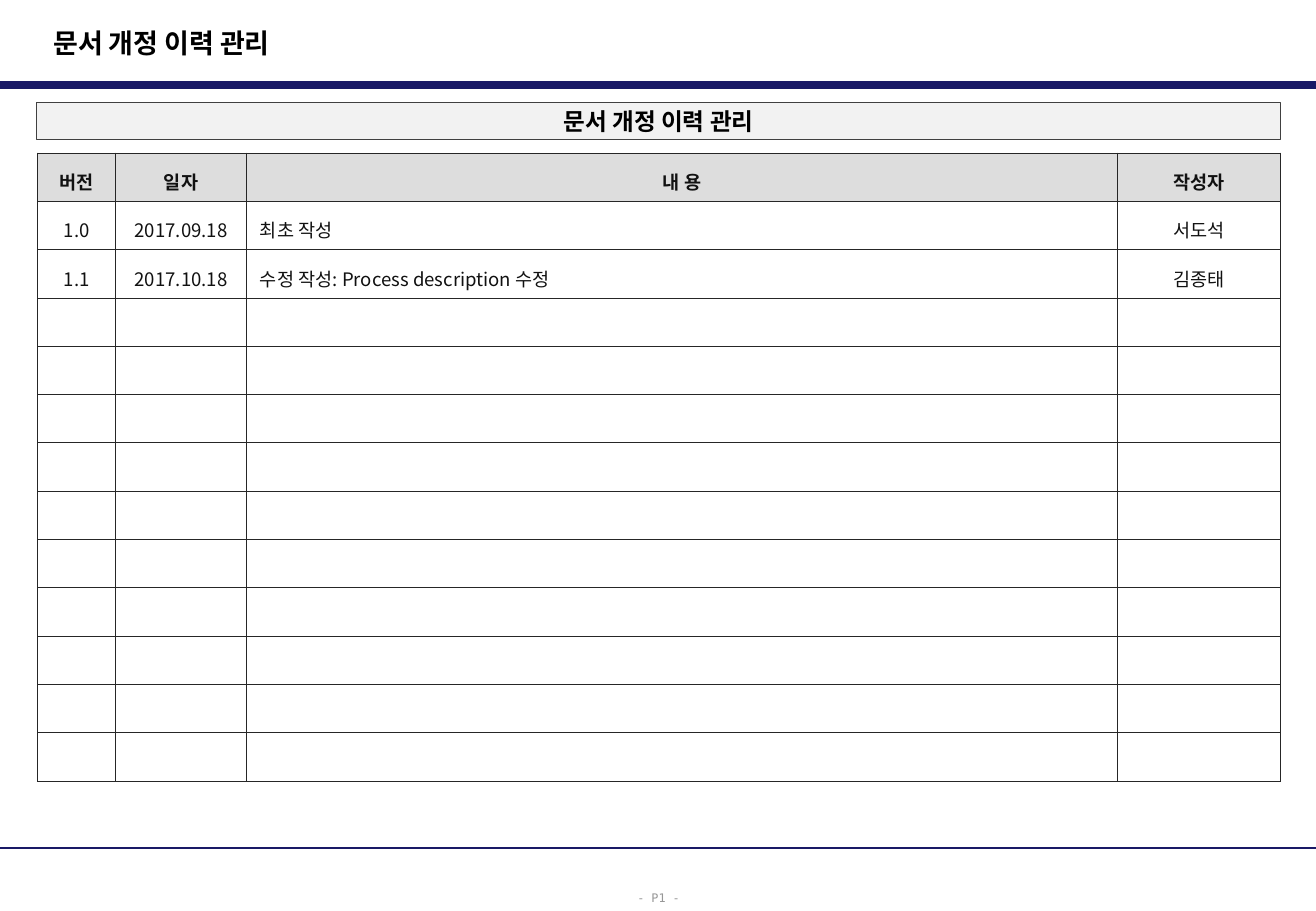
from dataclasses import dataclass

from lxml import etree
from pptx import Presentation
from pptx.dml.color import RGBColor
from pptx.enum.shapes import MSO_CONNECTOR, MSO_SHAPE
from pptx.enum.text import MSO_ANCHOR, PP_ALIGN
from pptx.oxml.ns import qn
from pptx.util import Emu, Inches, Pt

LEFT, CENTER = PP_ALIGN.LEFT, PP_ALIGN.CENTER
TOP, MIDDLE = MSO_ANCHOR.TOP, MSO_ANCHOR.MIDDLE
RECT, STRAIGHT = MSO_SHAPE.RECTANGLE, MSO_CONNECTOR.STRAIGHT

NAVY = RGBColor(0x19, 0x19, 0x66)
BLACK = RGBColor(0, 0, 0)
INK = RGBColor(0x11, 0x11, 0x11)
EDGE = RGBColor(0x26, 0x26, 0x26)
FRAME = RGBColor(0x40, 0x40, 0x40)
MUTED = RGBColor(0x96, 0x96, 0x96)
PALE = RGBColor(0xF2, 0xF2, 0xF2)
HEAD = RGBColor(0xDD, 0xDD, 0xDD)

WIDTH, HEIGHT = Inches(10.83), Inches(7.5)
SANS, MONO = "Noto Sans CJK KR", "DejaVu Sans Mono"
TITLE = "문서 개정 이력 관리"

# Column widths in percent of the slide width
COLS = (5.93, 9.95, 66.2, 12.39)
ROWS = 13
DATA = (
    ("버전", "일자", "내 용", "작성자"),
    ("1.0", "2017.09.18", "최초 작성", "서도석"),
    ("1.1", "2017.10.18", "수정 작성: Process description 수정", "김종태"),
)


@dataclass(frozen=True)
class Style:
    size: float
    color: RGBColor
    bold: bool = False
    font: str = SANS
    align: PP_ALIGN = CENTER
    space: float = 1.0


@dataclass(frozen=True)
class Box:
    """Place and size in percent of the slide."""
    x: float
    y: float
    w: float
    h: float

    def place(self) -> tuple:
        return across(self.x), down(self.y), across(self.w), down(self.h)


@dataclass(frozen=True)
class Label:
    box: Box
    text: str
    style: Style
    anchor: MSO_ANCHOR
    wrap: bool


@dataclass(frozen=True)
class Rule:
    y: float
    weight: float


RULES = (Rule(9.33, 4.5), Rule(93.07, 1.5))
LABELS = (
    Label(Box(47.46, 96.67, 5.17, 3.33), "- P1 -",
          Style(7, MUTED, font=MONO, space=1.3), TOP, False),
    Label(Box(3.14, 2.13, 65.65, 5.07), TITLE,
          Style(16, BLACK, True, align=LEFT), MIDDLE, True),
)
BANNER = Label(Box(2.77, 11.2, 94.55, 4.13), TITLE,
               Style(14, BLACK, True), MIDDLE, False)
GRID = Box(2.86, 16.8, sum(COLS), 68.93)


def across(share: float) -> Emu:
    return Emu(round(WIDTH * share / 100))


def down(share: float) -> Emu:
    return Emu(round(HEIGHT * share / 100))


def write(frame, text: str, style: Style) -> None:
    frame.text = text
    line = frame.paragraphs[0]
    line.alignment, line.line_spacing = style.align, style.space
    for run in line.runs:
        font = run.font
        font.size, font.bold, font.name = Pt(style.size), style.bold, style.font
        font.color.rgb = style.color
        east = etree.SubElement(run._r.get_or_add_rPr(), qn("a:ea"))
        east.set("typeface", style.font)
    if not text:
        end = etree.SubElement(line._p, qn("a:endParaRPr"))
        end.set("sz", str(round(style.size * 100)))


def fill_label(shape, label: Label) -> None:
    frame = shape.text_frame
    frame.word_wrap, frame.vertical_anchor = label.wrap, label.anchor
    write(frame, label.text, label.style)


def draw_rule(slide, rule: Rule) -> None:
    y = down(rule.y)
    line = slide.shapes.add_connector(STRAIGHT, 0, y, WIDTH, y)
    line.line.color.rgb, line.line.width = NAVY, Pt(rule.weight)
    etree.SubElement(line._element.spPr, qn("a:effectLst"))


def draw_banner(slide, label: Label) -> None:
    bar = slide.shapes.add_shape(RECT, *label.box.place())
    bar.shadow.inherit = False
    bar.fill.solid()
    bar.fill.fore_color.rgb = PALE
    bar.line.color.rgb, bar.line.width = FRAME, Pt(0.5)
    fill_label(bar, label)


def add_edges(cell) -> None:
    props = cell._tc.get_or_add_tcPr()
    for spot, side in enumerate(("lnL", "lnR", "lnT", "lnB")):
        edge = etree.Element(qn(f"a:{side}"), w=str(Pt(0.5)))
        solid = etree.SubElement(edge, qn("a:solidFill"))
        etree.SubElement(solid, qn("a:srgbClr"), val=str(EDGE))
        props.insert(spot, edge)


def draw_table(slide) -> None:
    table = slide.shapes.add_table(ROWS, len(COLS), *GRID.place()).table
    table.horz_banding = False
    for col, share in zip(table.columns, COLS):
        col.width = across(share)
    for r, row in enumerate(table.rows):
        row.height = down(GRID.h / ROWS)
        texts = DATA[r] if r < len(DATA) else ("",) * len(COLS)
        for c, (cell, text) in enumerate(zip(row.cells, texts)):
            cell.margin_left = cell.margin_right = Inches(0.11)
            cell.vertical_anchor = MIDDLE
            if r == 0:
                cell.fill.solid()
                cell.fill.fore_color.rgb = HEAD
            else:
                cell.fill.background()
            add_edges(cell)
            align = LEFT if r and c == 2 else CENTER
            write(cell.text_frame, text,
                  Style(11, INK, r == 0, align=align, space=1.3))


def main() -> None:
    deck = Presentation()
    deck.slide_width, deck.slide_height = WIDTH, HEIGHT
    slide = deck.slides.add_slide(deck.slide_layouts[6])

    # Page frame
    for rule in RULES:
        draw_rule(slide, rule)
    for label in LABELS:
        fill_label(slide.shapes.add_textbox(*label.box.place()), label)

    # Revision history
    draw_table(slide)
    draw_banner(slide, BANNER)
    deck.save("out.pptx")


if __name__ == "__main__":
    main()
